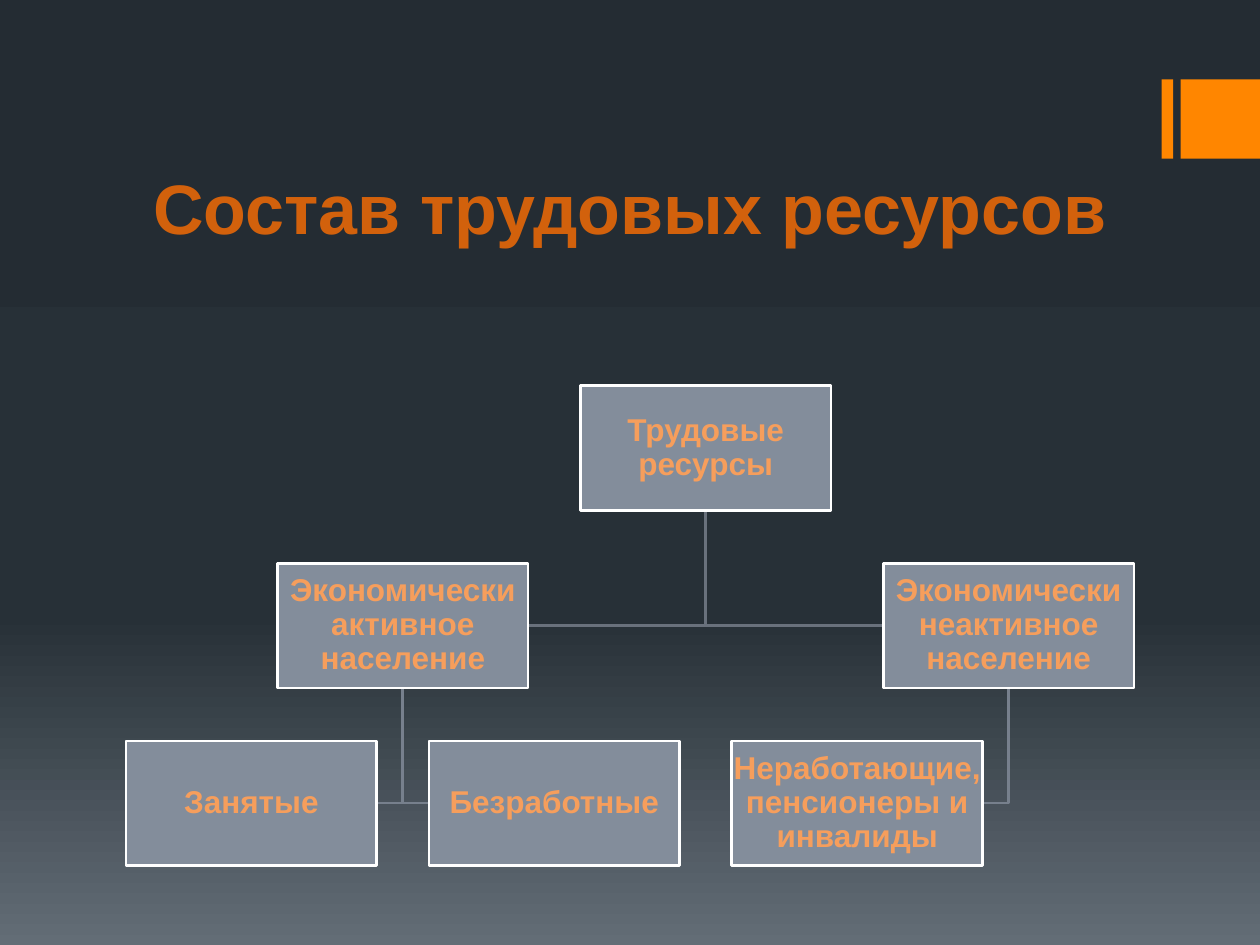
"""Builds a slide with an organisation chart of labour resources."""
import copy

import pptx
import pptx.util
import pptx.dml.color
import pptx.enum.shapes
import pptx.enum.text

TITLE = "Состав трудовых ресурсов"
NODES = {
    "all": ("Трудовые ресурсы", 3, 0, None),
    "active": ("Экономически активное население", 1, 1, "all"),
    "idle": ("Экономически неактивное население", 5, 1, "all"),
    "work": ("Занятые", 0, 2, "active"),
    "seek": ("Безработные", 2, 2, "active"),
    "none": ("Неработающие, пенсионеры и инвалиды", 4, 2, "idle"),
}
THEME = {
    "font": "Arial", "head": 40, "body": 18, "line": 1.5,
    "title": "D2610C", "text": "F69E5C", "box": "838D9B", "edge": "FFFFFF",
    "mark": "FF8600", "links": {1: "69717C", 2: "77808D"},
    "back": [(0, "242C33"), (0.65, "273037"), (1, "636D76")],
}
WIDE, HIGH = 10, 7.5
SIDE = 1
BOX_W, BOX_H = 1.99, 0.99
STEP_X = (WIDE - 2 * SIDE - BOX_W) / 5
TOP, STEP_Y = 3.06, 1.41
MARK_Y, MARK_H = 0.63, 0.63
MARKS = [(9.22, 0.09), (9.37, 0.63)]

Inches = pptx.util.Inches
Pt = pptx.util.Pt


def rgb(code):
    return pptx.dml.color.RGBColor.from_string(code)


def write(shape, text, size, color, anchor, inset=None, space=None):
    frame = shape.text_frame
    frame.word_wrap = True
    frame.vertical_anchor = anchor
    if inset is not None:
        frame.margin_left = frame.margin_right = Inches(inset)
        frame.margin_top = frame.margin_bottom = Inches(inset)
    para = frame.paragraphs[0]
    para.alignment = pptx.enum.text.PP_ALIGN.CENTER
    para.line_spacing = space
    run = para.add_run()
    run.text = text
    run.font.name = THEME["font"]
    run.font.size = Pt(size)
    run.font.bold = True
    run.font.color.rgb = rgb(color)


def block(slide, x, y, w, h, fill, edge=None):
    kind = pptx.enum.shapes.MSO_SHAPE.RECTANGLE
    shape = slide.shapes.add_shape(kind, *map(Inches, (x, y, w, h)))
    shape.shadow.inherit = False
    shape.fill.solid()
    shape.fill.fore_color.rgb = rgb(fill)
    if edge:
        shape.line.color.rgb = rgb(edge)
        shape.line.width = Pt(THEME["line"])
    else:
        shape.line.fill.background()
    return shape


def spot(col, row):
    return SIDE + col * STEP_X, TOP + row * STEP_Y


def link(slide, above, below, color):
    (ax, ay), (bx, by) = above, below
    mid = ax + BOX_W / 2
    level = by + BOX_H / 2
    end = bx if bx > ax else bx + BOX_W
    form = slide.shapes.build_freeform(Inches(mid), Inches(ay + BOX_H))
    points = [(Inches(mid), Inches(level)), (Inches(end), Inches(level))]
    form.add_line_segments(points, close=False)
    shape = form.convert_to_shape()
    shape.shadow.inherit = False
    shape.fill.background()
    shape.line.color.rgb = rgb(color)
    shape.line.width = Pt(THEME["line"])


def shade(slide):
    fill = slide.background.fill
    fill.gradient()
    fill.gradient_angle = 270
    stops = slide.background.fill._fill._gradFill.gsLst
    stops.append(copy.deepcopy(stops[-1]))
    for stop, (place, color) in zip(fill.gradient_stops, THEME["back"]):
        stop.position = place
        stop.color.rgb = rgb(color)


def main():
    deck = pptx.Presentation()
    deck.slide_width, deck.slide_height = Inches(WIDE), Inches(HIGH)
    slide = deck.slides.add_slide(deck.slide_layouts[6])
    shade(slide)
    for x, w in MARKS:
        block(slide, x, MARK_Y, w, MARK_H, THEME["mark"])
    area = map(Inches, (SIDE, 0.29, WIDE - 2 * SIDE, 1.73))
    head = slide.shapes.add_textbox(*area)
    anchor = pptx.enum.text.MSO_ANCHOR
    write(head, TITLE, THEME["head"], THEME["title"], anchor.BOTTOM)
    spots = {key: spot(col, row) for key, (_, col, row, _) in NODES.items()}
    for key, (_, _, row, boss) in NODES.items():
        if boss:
            link(slide, spots[boss], spots[key], THEME["links"][row])
    for key, (text, *_) in NODES.items():
        shape = block(slide, *spots[key], BOX_W, BOX_H, THEME["box"], THEME["edge"])
        write(shape, text, THEME["body"], THEME["text"], anchor.MIDDLE,
              inset=0.01, space=0.9)
    deck.save("out.pptx")


if __name__ == "__main__":
    main()
